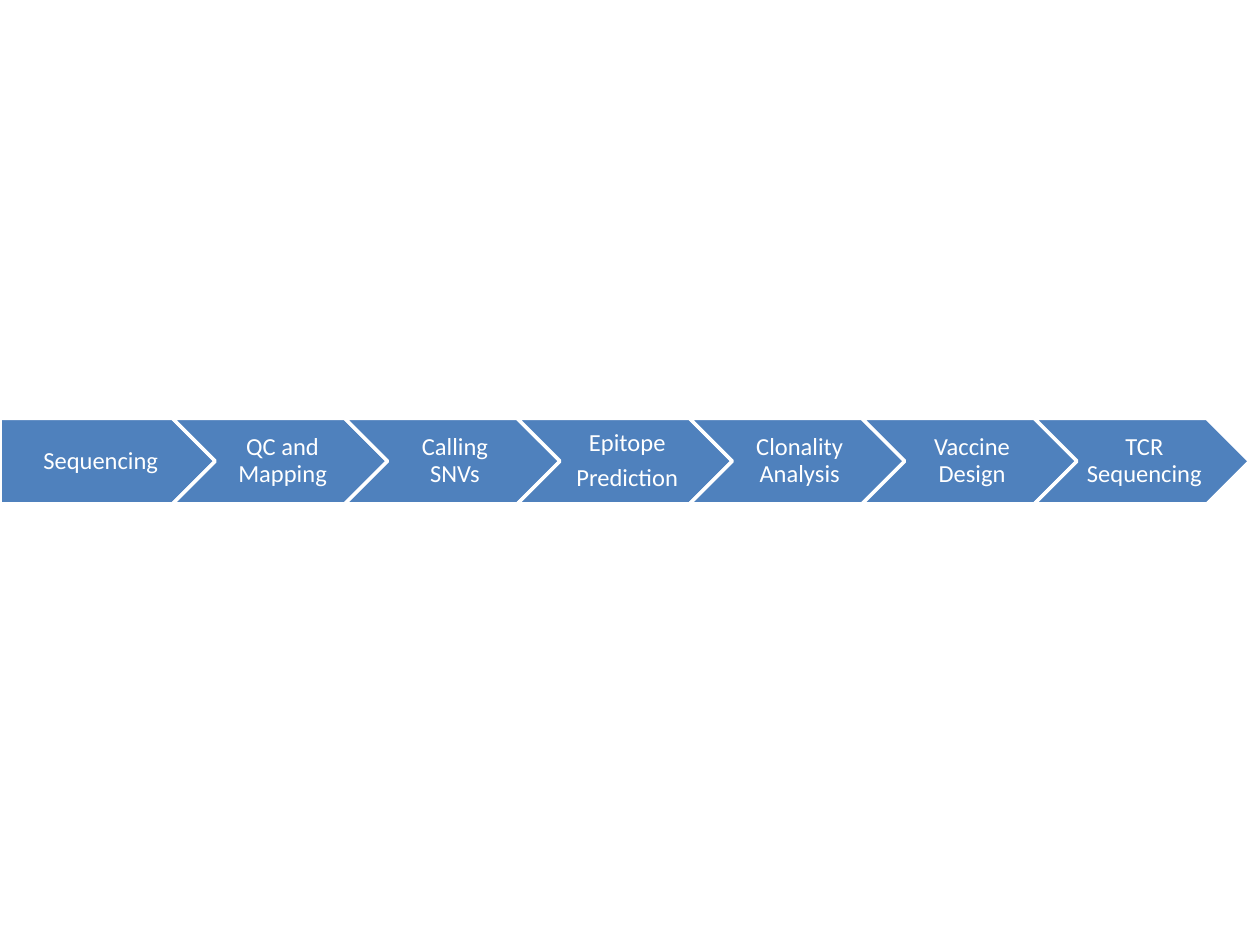
from dataclasses import dataclass

from pptx import Presentation
from pptx.dml.color import RGBColor
from pptx.enum.shapes import MSO_SHAPE
from pptx.enum.text import MSO_ANCHOR, PP_ALIGN
from pptx.util import Inches, Pt

PENTAGON, CHEVRON = MSO_SHAPE.PENTAGON, MSO_SHAPE.CHEVRON
MIDDLE, CENTER = MSO_ANCHOR.MIDDLE, PP_ALIGN.CENTER


@dataclass(frozen=True)
class Theme:
    step_fill: RGBColor = RGBColor(0x4F, 0x81, 0xBD)
    white: RGBColor = RGBColor(0xFF, 0xFF, 0xFF)
    font: str = "Calibri"
    text_size: Pt = Pt(14)
    outline: Pt = Pt(2)


theme = Theme()

presentation = Presentation()
presentation.slide_width, presentation.slide_height = Inches(10), Inches(7.5)
blank_layout = presentation.slide_layouts[6]
slide = presentation.slides.add_slide(blank_layout)

# Process steps, each overlapping the one before by a fifth of its width
steps = [
    "Sequencing",
    "QC and Mapping",
    "Calling SNVs",
    "Epitope\nPrediction",
    "Clonality Analysis",
    "Vaccine Design",
    "TCR Sequencing",
]
step_top, step_width, step_height = 3.32, 1.71, 0.68
step_pitch = 0.8 * step_width

for index, label in enumerate(steps):
    is_first = index == 0
    shape = slide.shapes.add_shape(
        PENTAGON if is_first else CHEVRON,
        Inches(index * step_pitch), Inches(step_top),
        Inches(step_width), Inches(step_height),
    )
    shape.shadow.inherit = False
    shape.fill.solid()
    shape.fill.fore_color.rgb = theme.step_fill
    shape.line.color.rgb = theme.white
    shape.line.width = theme.outline

    # Step label
    text_frame = shape.text_frame
    text_frame.word_wrap = True
    text_frame.vertical_anchor = MIDDLE
    text_frame.margin_left = Inches(0.08 if is_first else 0.06)
    text_frame.margin_right = Inches(0.02)
    text_frame.margin_top = text_frame.margin_bottom = Inches(0.04)
    text_frame.text = label
    for paragraph in text_frame.paragraphs:
        paragraph.alignment = CENTER
        paragraph.line_spacing = 0.9
        paragraph.space_after = Pt(4.9)
        for run in paragraph.runs:
            run.font.name = theme.font
            run.font.size = theme.text_size
            run.font.color.rgb = theme.white

presentation.save("out.pptx")
